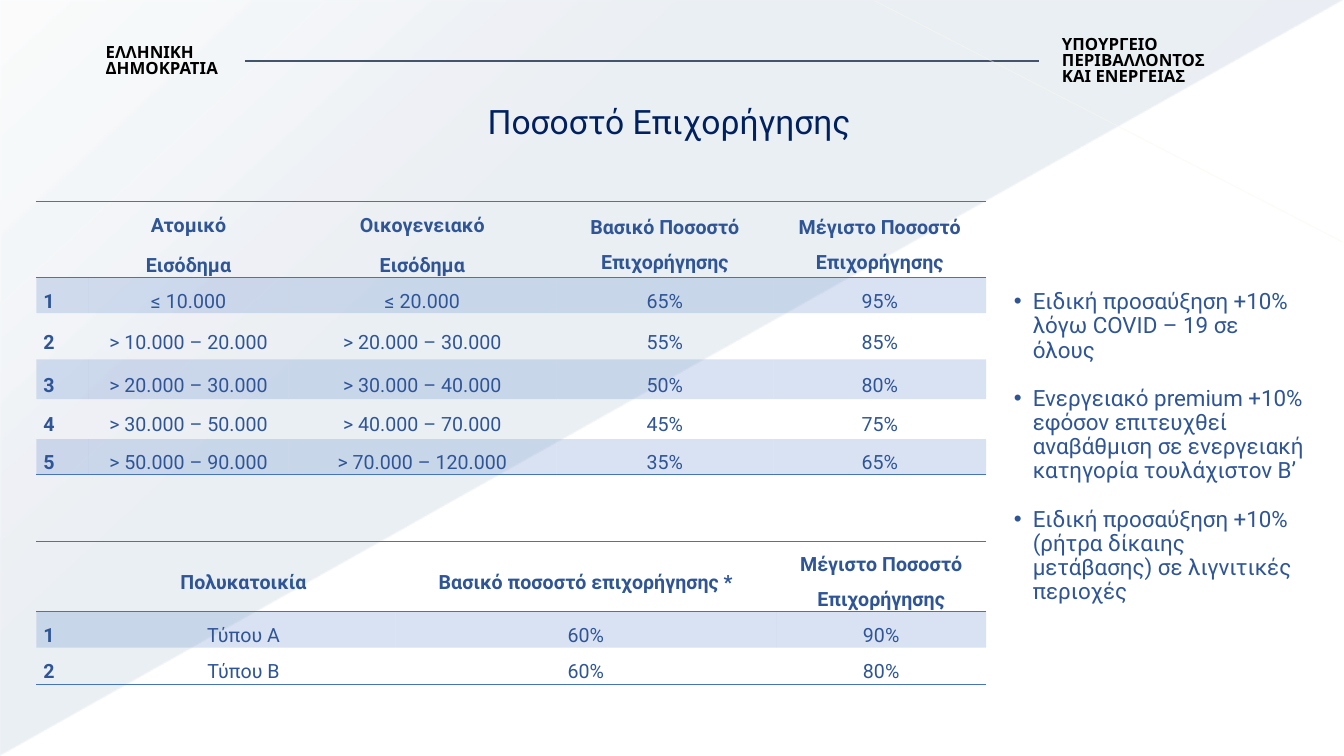
from lxml import etree
from pptx import Presentation
from pptx.dml.color import RGBColor
from pptx.enum.shapes import MSO_CONNECTOR as CONN, MSO_SHAPE as SHAPE
from pptx.enum.text import MSO_ANCHOR as ANCHOR, MSO_AUTO_SIZE as AUTO, PP_ALIGN as ALIGN
from pptx.oxml import parse_xml
from pptx.oxml.ns import nsdecls, qn
from pptx.util import Pt

COLORS = {
    "navy": "1F497D", "slate": "44546A", "cream": "FAF8EE", "black": "000000",
    "title": "002060", "text": "2F5597", "accent": "4472C4",
}
NO_STYLE = "{2D5ABB26-0587-4C30-8999-92F81FD0307C}"


def rgb(name):
    return RGBColor.from_string(COLORS[name])


def set_alpha(parent, percent):
    clr = next(parent.iter(qn("a:srgbClr")))
    etree.SubElement(clr, qn("a:alpha")).set("val", str(percent * 1000))


class Deck:
    """Holds the text style and the current slide."""
    font = "Roboto"

    def __init__(self, prs):
        self.s = prs.slides.add_slide(prs.slide_layouts[1])

    def run(self, p, text, size, color, bold=False, font=None):
        r = p.add_run()
        r.text = text
        r.font.name = font or self.font
        r.font.size = Pt(size)
        r.font.bold = bold
        r.font.color.rgb = rgb(color)

    def backdrop(self, x, y, w, h, stops, angle):
        sp = self.s.shapes.add_shape(SHAPE.RIGHT_TRIANGLE, Pt(x), Pt(y), Pt(w), Pt(h))
        sp.shadow.inherit = False
        sp.line.fill.background()
        sp.rotation = 180
        spPr = sp._element.spPr
        spPr.find(qn("a:xfrm")).set("flipH", "1")
        gs = "".join(
            f'<a:gs pos="{pos * 1000}"><a:srgbClr val="{COLORS["navy"]}">'
            f'<a:alpha val="{alpha * 1000}"/></a:srgbClr></a:gs>' for pos, alpha in stops)
        spPr.find(qn("a:prstGeom")).addnext(parse_xml(
            f'<a:gradFill {nsdecls("a")} rotWithShape="1"><a:gsLst>{gs}</a:gsLst>'
            f'<a:lin ang="{angle * 60000}" scaled="0"/></a:gradFill>'))

    def line(self, x1, y1, x2, y2, color, width, alpha=100):
        c = self.s.shapes.add_connector(CONN.STRAIGHT, Pt(x1), Pt(y1), Pt(x2), Pt(y2))
        c.line.color.rgb = rgb(color)
        c.line.width = Pt(width)
        spPr = c._element.spPr
        if alpha < 100:
            set_alpha(spPr, alpha)
        etree.SubElement(spPr, qn("a:effectLst"))

    def label(self, x, y, w, h, text):
        tf = self.s.shapes.add_textbox(Pt(x), Pt(y), Pt(w), Pt(h)).text_frame
        tf.word_wrap = True
        p = tf.paragraphs[0]
        p.line_spacing = 0.8
        self.run(p, text, 12, "black", True, "League Spartan")

    def placeholder(self, idx, x, y, w, h, anchor):
        sp = self.s.placeholders[idx]
        self.s.shapes._spTree.append(sp._element)  # bring to front
        sp.left, sp.top, sp.width, sp.height = Pt(x), Pt(y), Pt(w), Pt(h)
        tf = sp.text_frame
        tf.word_wrap = True
        tf.auto_size = AUTO.NONE
        tf.vertical_anchor = anchor
        return tf

    def title(self, x, y, w, h, text):
        p = self.placeholder(0, x, y, w, h, ANCHOR.MIDDLE).paragraphs[0]
        p.alignment = ALIGN.CENTER
        p.line_spacing = 0.9
        self.run(p, text, 24, "title")

    def bullets(self, x, y, w, h, items, gap):
        tf = self.placeholder(1, x, y, w, h, ANCHOR.TOP)
        for i, text in enumerate(items):
            p = tf.add_paragraph() if i else tf.paragraphs[0]
            p.line_spacing = 0.9
            p.space_before = Pt(gap if i else 0)
            pPr = p._p.get_or_add_pPr()
            pPr.set("marL", str(Pt(13.5)))
            pPr.set("indent", str(Pt(-13.5)))
            etree.SubElement(pPr, qn("a:buFont")).set("typeface", "Arial")
            etree.SubElement(pPr, qn("a:buChar")).set("char", "•")
            self.run(p, text, 16, "text")

    def border(self, cell, side):
        cell._tc.get_or_add_tcPr().append(parse_xml(
            f'<a:{side} {nsdecls("a")} w="{Pt(1)}"><a:solidFill>'
            f'<a:srgbClr val="{COLORS["accent"]}"/></a:solidFill></a:{side}>'))

    def cell(self, cell, text, margin, header, first_col):
        cell.vertical_anchor = ANCHOR.MIDDLE
        cell.margin_left = cell.margin_right = Pt(margin)
        cell.margin_top, cell.margin_bottom = Pt(0.5), Pt(0)
        tf = cell.text_frame
        for i, part in enumerate(text.split("\n") if text else []):
            p = tf.add_paragraph() if i else tf.paragraphs[0]
            p.alignment = ALIGN.JUSTIFY if first_col else ALIGN.CENTER
            p.line_spacing = 1.5
            p.space_after = Pt(4)
            self.run(p, part, 14, "text", header or first_col)

    def table(self, x, y, widths, heights, margins, data):
        t = self.s.shapes.add_table(len(heights), len(widths), Pt(x), Pt(y),
                                    Pt(sum(widths)), Pt(sum(heights))).table
        t.first_row = t.horz_banding = False
        t._tbl.tblPr.find(qn("a:tableStyleId")).text = NO_STYLE
        for col, w in zip(t.columns, widths):
            col.width = Pt(w)
        last = len(data) - 1
        for r, (row, h) in enumerate(zip(data, heights)):
            t.rows[r].height = Pt(h)
            for c, text in enumerate(row):
                cell = t.cell(r, c)
                self.cell(cell, text, margins[c], r == 0, c == 0)
                if r == 0:
                    self.border(cell, "lnT")
                if r in (0, last):
                    self.border(cell, "lnB")
                if r % 2:  # shaded band
                    cell.fill.solid()
                    cell.fill.fore_color.rgb = rgb("accent")
                    set_alpha(cell._tc.tcPr.find(qn("a:solidFill")), 20)
                else:
                    cell.fill.background()


def main():
    prs = Presentation()
    prs.slide_width, prs.slide_height = Pt(960), Pt(540)
    deck = Deck(prs)

    # Backdrop and header
    deck.backdrop(0.7, 0.7, 958.5, 538.5, [(0, 10), (70, 8), (100, 1)], 133)
    deck.line(175, 43.6, 742, 43.6, "slate", 1)
    deck.line(959, 172.8, 625, 0.7, "cream", 0.75, 45)
    deck.label(751.5, 23, 133, 42.5, "ΥΠΟΥΡΓΕΙΟ ΠΕΡΙΒΑΛΛΟΝΤΟΣ ΚΑΙ ΕΝΕΡΓΕΙΑΣ")
    deck.label(68.4, 28.8, 133, 30, "ΕΛΛΗΝΙΚΗ ΔΗΜΟΚΡΑΤΙΑ")
    deck.title(64, 67.7, 828, 41.8, "Ποσοστό Επιχορήγησης")

    # Grant rates by income
    deck.table(26, 144, [37.5, 142.5, 191.5, 155, 152], [54, 25.5, 33, 28.5, 28.5, 25.5],
               [5, 5, 5, 0.7, 0], [
        ("", "Ατομικό\nΕισόδημα", "Οικογενειακό\nΕισόδημα",
         "Βασικό Ποσοστό Επιχορήγησης", "Μέγιστο Ποσοστό Επιχορήγησης"),
        ("1", "≤ 10.000", "≤ 20.000", "65%", "95%"),
        ("2", "> 10.000 – 20.000", "> 20.000 – 30.000", "55%", "85%"),
        ("3", "> 20.000 – 30.000", "> 30.000 – 40.000", "50%", "80%"),
        ("4", "> 30.000 – 50.000", "> 40.000 – 70.000", "45%", "75%"),
        ("5", "> 50.000 – 90.000", "> 70.000 – 120.000", "35%", "65%"),
    ])

    # Grant rates for apartment buildings
    deck.table(26, 386.5, [39.5, 217, 272, 150], [49, 26, 26], [5, 5, 0.7, 0], [
        ("", "Πολυκατοικία", "Βασικό ποσοστό επιχορήγησης *", "Μέγιστο Ποσοστό Επιχορήγησης"),
        ("1", "Τύπου Α", "60%", "90%"),
        ("2", "Τύπου Β", "60%", "80%"),
    ])

    # Extra bonuses
    deck.bullets(717, 203.8, 222.5, 260, [
        "Eιδική προσαύξηση +10% λόγω COVID – 19 σε όλους",
        "Ενεργειακό premium +10% εφόσον επιτευχθεί αναβάθμιση σε ενεργειακή "
        "κατηγορία τουλάχιστον Β’",
        "Ειδική προσαύξηση +10% (ρήτρα δίκαιης μετάβασης) σε λιγνιτικές περιοχές",
    ], 17.3)

    prs.save("out.pptx")


if __name__ == "__main__":
    main()
